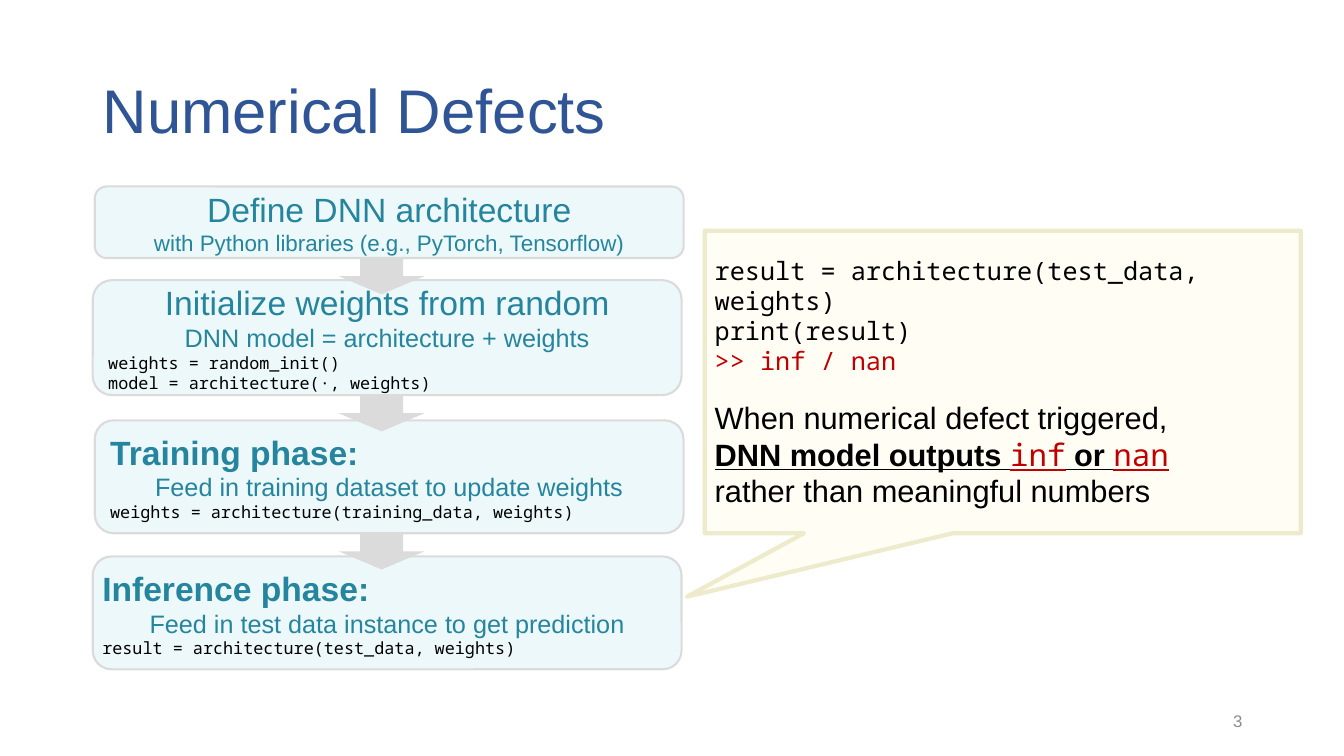
from dataclasses import dataclass

from pptx import Presentation
from pptx.dml.color import RGBColor
from pptx.enum.shapes import MSO_SHAPE
from pptx.enum.text import MSO_ANCHOR, PP_ALIGN
from pptx.util import Pt

ROUNDED = MSO_SHAPE.ROUNDED_RECTANGLE
DOWN_ARROW = MSO_SHAPE.DOWN_ARROW
CALLOUT = MSO_SHAPE.RECTANGULAR_CALLOUT
MIDDLE = MSO_ANCHOR.MIDDLE
LEFT, CENTER, RIGHT = PP_ALIGN.LEFT, PP_ALIGN.CENTER, PP_ALIGN.RIGHT
EMU_PER_PX = 9144


@dataclass(frozen=True)
class Theme:
    sans: str = "Arial"
    mono: str = "Noto Sans Mono"
    title: str = "2F5597"
    teal: str = "26859E"
    phase_fill: str = "ECF8F9"
    grey: str = "DBDBDB"
    number: str = "8C8C8C"
    callout_fill: str = "FFFDF4"
    callout_line: str = "EDEBCB"
    black: str = "000000"
    red: str = "C00000"
    title_size: int = 44
    heading_size: int = 24
    message_size: int = 22
    body_size: int = 18
    library_size: int = 16
    small_size: int = 12
    message_gap: int = 16


THEME = Theme()


def px(length):
    return round(length * EMU_PER_PX)


def prepare_frame(frame, inset=10):
    frame.word_wrap = True
    frame.vertical_anchor = MIDDLE
    frame.margin_left = frame.margin_right = px(inset)
    frame.margin_top = frame.margin_bottom = px(5)
    return frame


def add_run(paragraph, text, size, color, font=THEME.sans, bold=False, underline=False):
    run = paragraph.add_run()
    run.text = text
    run.font.name = font
    run.font.size = Pt(size)
    run.font.color.rgb = RGBColor.from_string(color)
    run.font.bold = bold
    run.font.underline = underline


def add_line(frame, runs, align=LEFT):
    first = frame.paragraphs[0]
    paragraph = frame.add_paragraph() if first.runs else first
    paragraph.alignment = align
    for text, size, color, *style in runs:
        add_run(paragraph, text, size, color, *style)
    return paragraph


def add_panel(slide, kind, box, fill, line=None, width=0):
    panel = slide.shapes.add_shape(kind, *map(px, box))
    panel.shadow.inherit = False
    panel.fill.solid()
    panel.fill.fore_color.rgb = RGBColor.from_string(fill)
    if line:
        panel.line.color.rgb = RGBColor.from_string(line)
        panel.line.width = Pt(width)
    else:
        panel.line.fill.background()
    return panel


def add_label(slide, box, text, size, color, align=LEFT):
    label = slide.shapes.add_textbox(*map(px, box))
    frame = prepare_frame(label.text_frame)
    return add_line(frame, [(text, size, color)], align)


def add_phase(slide, box, inset, heading, detail, detail_size, code):
    phase = add_panel(slide, ROUNDED, box, THEME.phase_fill, THEME.grey, 1.5)
    frame = prepare_frame(phase.text_frame, inset)
    named = heading.endswith(":")
    add_line(frame, [(heading, THEME.heading_size, THEME.teal, THEME.sans, named)],
             LEFT if named else CENTER)
    add_line(frame, [(detail, detail_size, THEME.teal)], CENTER)
    for statement in code:
        add_line(frame, [(statement, THEME.small_size, THEME.black, THEME.mono)])


def add_pipeline(slide, box):
    left, top, width, _ = box
    phases = [
        (2, 0, 71, 6, "Define DNN architecture",
         "with Python libraries (e.g., PyTorch, Tensorflow)", THEME.library_size, []),
        (0, 93, 114, 10, "Initialize weights from random",
         "DNN model = architecture + weights", THEME.body_size,
         ["weights = random_init()", "model = architecture(·, weights)"]),
        (2, 232, 112, 10, "Training phase:",
         "Feed in training dataset to update weights", THEME.body_size,
         ["weights = architecture(training_data, weights)"]),
        (0, 367, 112, 4, "Inference phase:",
         "Feed in test data instance to get prediction", THEME.body_size,
         ["result = architecture(test_data, weights)"]),
    ]
    for shift, offset, height, *content in phases:
        add_phase(slide, (left + shift, top + offset, width, height), *content)
    for _, offset, height, *_ in phases[:-1]:
        add_panel(slide, DOWN_ARROW, (left + 244, top + offset + height, 85, 36), THEME.grey)


def add_defect_callout(slide, box):
    callout = add_panel(slide, CALLOUT, box, THEME.callout_fill, THEME.callout_line, 3)
    callout.adjustments[0] = -0.53
    callout.adjustments[1] = 0.71
    frame = prepare_frame(callout.text_frame)
    for statement, color in [
        ("result = architecture(test_data, weights)", THEME.black),
        ("print(result)", THEME.black),
        (">> inf / nan", THEME.red),
    ]:
        add_line(frame, [(statement, THEME.body_size, color, THEME.mono)])
    size = THEME.message_size
    strong = (size, THEME.black, THEME.sans, True, True)
    value = (size, THEME.red, THEME.mono, False, True)
    trigger = add_line(frame, [("When numerical defect triggered,", size, THEME.black)])
    trigger.space_before = Pt(THEME.message_gap)
    add_line(frame, [("DNN model outputs ", *strong), ("inf", *value),
                     (" or ", *strong), ("nan", *value)])
    add_line(frame, [("rather than meaningful numbers", size, THEME.black)])


def main():
    deck = Presentation()
    deck.slide_width, deck.slide_height = px(1333), px(750)
    slide = deck.slides.add_slide(deck.slide_layouts[6])
    title = add_label(slide, (92, 40, 1150, 145), "Numerical Defects",
                      THEME.title_size, THEME.title)
    title.line_spacing = 0.9
    add_label(slide, (942, 695, 300, 40), "3", THEME.small_size, THEME.number, RIGHT)
    add_pipeline(slide, (92, 185, 584, 479))
    add_defect_callout(slide, (699, 229, 591, 300))
    deck.save("out.pptx")


if __name__ == "__main__":
    main()
